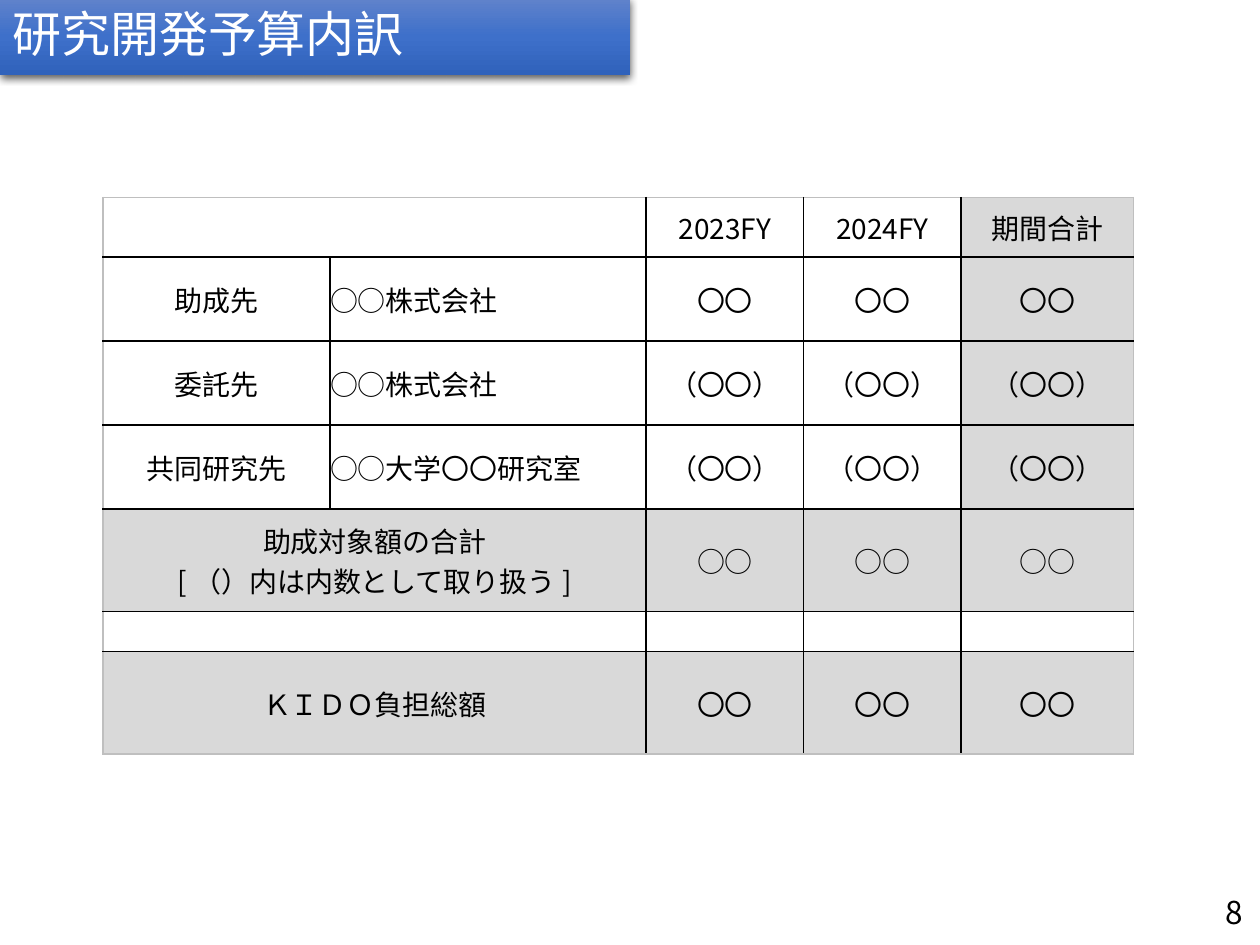
from lxml.etree import SubElement
from pptx import Presentation
from pptx.dml.color import RGBColor
from pptx.enum.shapes import MSO_SHAPE as Shape
from pptx.enum.text import MSO_ANCHOR as Anchor, PP_ALIGN as Align
from pptx.oxml import parse_xml
from pptx.oxml.ns import nsdecls, qn
from pptx.util import Pt

BLACK = RGBColor(0x00, 0x00, 0x00)
WHITE = RGBColor(0xFF, 0xFF, 0xFF)
SHADE = RGBColor(0xD9, 0xD9, 0xD9)
EDGE = RGBColor(0xBF, 0xBF, 0xBF)
BANNER_STOPS = [
    (0, RGBColor(0x61, 0x83, 0xCB)),
    (50, RGBColor(0x3E, 0x70, 0xCA)),
    (100, RGBColor(0x30, 0x62, 0xBB)),
]
GOTHIC = "Noto Sans CJK JP"

TITLE = "研究開発予算内訳"
PAGE_NUMBER = "8"
BUDGET = [
    ["", "", "2023FY", "2024FY", "期間合計"],
    ["助成先", "○○株式会社", "〇〇", "〇〇", "〇〇"],
    ["委託先", "○○株式会社", "（〇〇）", "（〇〇）", "（〇〇）"],
    ["共同研究先", "○○大学〇〇研究室", "（〇〇）", "（〇〇）", "（〇〇）"],
    ["助成対象額の合計\n[ （）内は内数として取り扱う ]", "", "○○", "○○", "○○"],
    ["", "", "", "", ""],
    ["ＫＩＤＯ負担総額", "", "〇〇", "〇〇", "〇〇"],
]
COLUMN_WIDTHS = [129.6, 180.7, 90, 90, 98.6]
ROW_HEIGHTS = [34, 48, 48, 48, 58.5, 23, 58.5]
SPANNED_ROWS = {0, 4, 5, 6}
TOTAL_ROWS = {4, 6}
SPACER_ROW = 5
TOTAL_COLUMN = len(COLUMN_WIDTHS) - 1
NAME_COLUMN = 1


def add_text(paragraph, text, size, font, color):
    run = paragraph.add_run()
    run.text = text
    run.font.size = Pt(size)
    run.font.name = font
    run.font.color.rgb = color
    SubElement(run.font._element, qn("a:ea"), typeface=font)


def add_banner(slide):
    banner = slide.shapes.add_shape(Shape.RECTANGLE, Pt(0), Pt(-1.3), Pt(360), Pt(44))
    banner.line.fill.background()
    banner.fill.gradient()
    banner.fill.gradient_angle = 270
    stops = "".join(
        f'<a:gs pos="{percent * 1000}"><a:srgbClr val="{color}"/></a:gs>'
        for percent, color in BANNER_STOPS
    )
    properties = banner._element.spPr
    gradient = properties.find(qn("a:gradFill"))
    gradient.replace(
        gradient.find(qn("a:gsLst")),
        parse_xml(f'<a:gsLst {nsdecls("a")}>{stops}</a:gsLst>'),
    )
    properties.append(parse_xml(
        f'<a:effectLst {nsdecls("a")}>'
        f'<a:outerShdw blurRad="{Pt(4.5)}" dist="{Pt(1.5)}" dir="5400000" rotWithShape="0">'
        '<a:srgbClr val="000000"><a:alpha val="63000"/></a:srgbClr>'
        '</a:outerShdw></a:effectLst>'
    ))
    frame = banner.text_frame
    frame.vertical_anchor = Anchor.MIDDLE
    heading = frame.paragraphs[0]
    heading.alignment = Align.LEFT
    heading.line_spacing = 0.9
    add_text(heading, TITLE, 28, "Calibri", WHITE)


def set_borders(cell, row, column):
    outer = {
        "a:lnL": column == 0,
        "a:lnR": column == TOTAL_COLUMN,
        "a:lnT": row == 0,
        "a:lnB": row == len(BUDGET) - 1,
    }
    properties = cell._tc.get_or_add_tcPr()
    for position, (side, is_outer) in enumerate(outer.items()):
        properties.insert(position, parse_xml(
            f'<{side} {nsdecls("a")} w="{Pt(1)}"><a:solidFill>'
            f'<a:srgbClr val="{EDGE if is_outer else BLACK}"/>'
            f'</a:solidFill></{side}>'
        ))


def fill_cell(cell, row, column, content):
    shaded = row in TOTAL_ROWS or (column == TOTAL_COLUMN and row != SPACER_ROW)
    cell.fill.solid()
    cell.fill.fore_color.rgb = SHADE if shaded else WHITE
    set_borders(cell, row, column)
    cell.margin_left = cell.margin_right = cell.margin_top = cell.margin_bottom = 0
    cell.vertical_anchor = Anchor.MIDDLE
    frame = cell.text_frame
    for number, line in enumerate(content.split("\n")):
        paragraph = frame.add_paragraph() if number else frame.paragraphs[0]
        paragraph.alignment = Align.LEFT if column == NAME_COLUMN else Align.CENTER
        add_text(paragraph, line, 16, GOTHIC, BLACK)


def add_budget_table(slide):
    table = slide.shapes.add_table(
        len(ROW_HEIGHTS), len(COLUMN_WIDTHS),
        Pt(59), Pt(113), Pt(sum(COLUMN_WIDTHS)), Pt(sum(ROW_HEIGHTS)),
    ).table
    table.first_row = table.horz_banding = False
    for column, width in zip(table.columns, COLUMN_WIDTHS):
        column.width = Pt(width)
    for row, height in zip(table.rows, ROW_HEIGHTS):
        row.height = Pt(height)
    for row, contents in enumerate(BUDGET):
        if row in SPANNED_ROWS:
            table.cell(row, 0).merge(table.cell(row, NAME_COLUMN))
        for column, content in enumerate(contents):
            fill_cell(table.cell(row, column), row, column, content)


def add_page_number(slide):
    frame = slide.shapes.add_textbox(Pt(669), Pt(512), Pt(41.5), Pt(18)).text_frame
    frame.margin_left = frame.margin_right = frame.margin_top = frame.margin_bottom = 0
    frame.word_wrap = False
    frame.vertical_anchor = Anchor.MIDDLE
    frame.paragraphs[0].alignment = Align.RIGHT
    add_text(frame.paragraphs[0], PAGE_NUMBER, 18, GOTHIC, BLACK)


def main():
    deck = Presentation()
    deck.slide_width, deck.slide_height = Pt(720), Pt(540)
    slide = deck.slides.add_slide(deck.slide_layouts[6])
    add_banner(slide)
    add_budget_table(slide)
    add_page_number(slide)
    deck.save("out.pptx")


if __name__ == "__main__":
    main()
